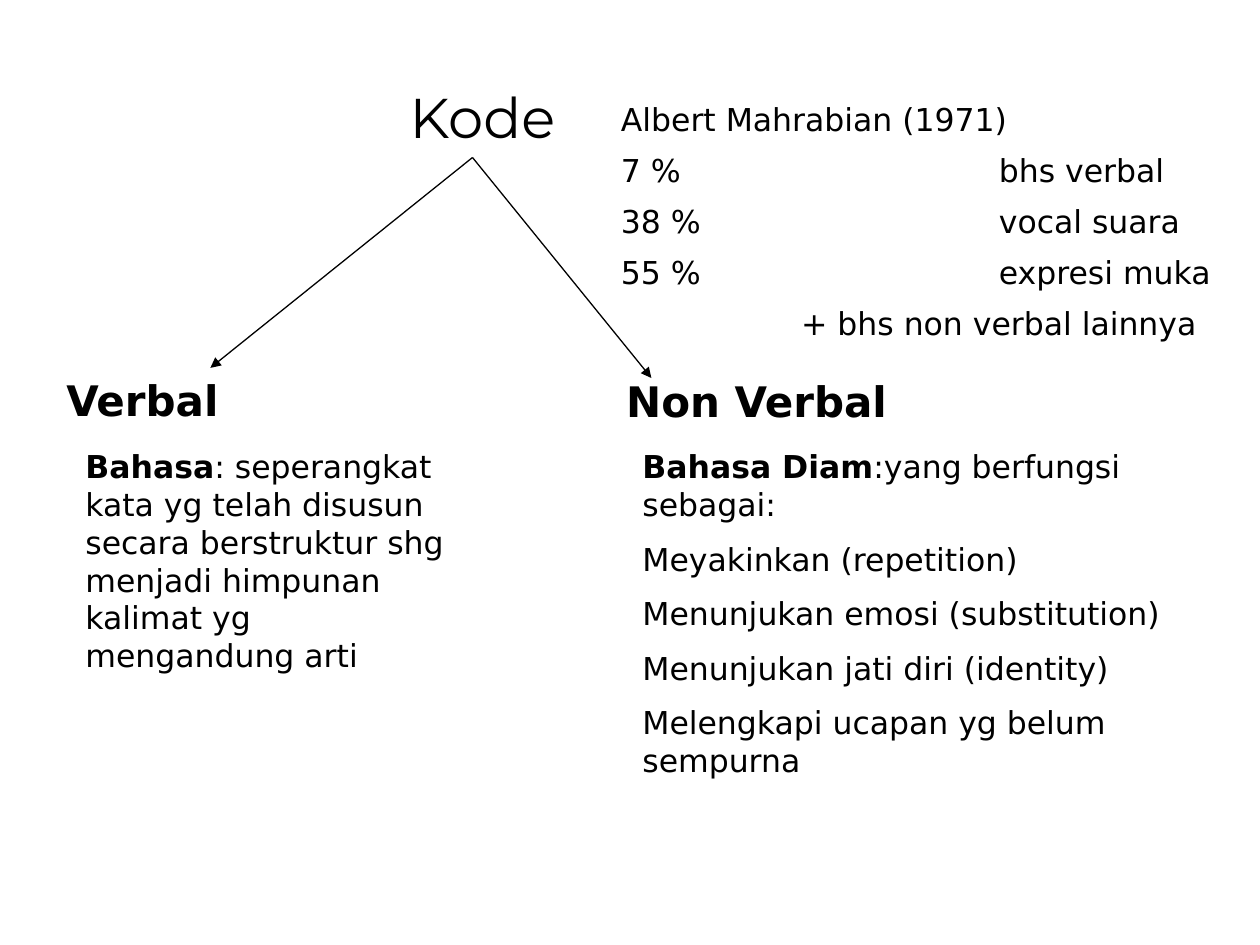
from dataclasses import dataclass

from lxml import etree
from pptx import Presentation
from pptx.dml.color import RGBColor
from pptx.enum.shapes import MSO_CONNECTOR
from pptx.enum.text import MSO_ANCHOR, MSO_AUTO_SIZE, PP_ALIGN
from pptx.oxml.ns import qn
from pptx.util import Inches, Pt

LEFT, CENTER = PP_ALIGN.LEFT, PP_ALIGN.CENTER
TOP, MIDDLE = MSO_ANCHOR.TOP, MSO_ANCHOR.MIDDLE
FIT_SHAPE, FIXED = MSO_AUTO_SIZE.SHAPE_TO_FIT_TEXT, MSO_AUTO_SIZE.NONE
STRAIGHT = MSO_CONNECTOR.STRAIGHT


@dataclass(frozen=True)
class Theme:
    ink: RGBColor = RGBColor(0, 0, 0)
    title_font: str = "Montserrat"
    body_font: str = "DejaVu Sans"
    title_size: Pt = Pt(32)
    heading_size: Pt = Pt(24)
    body_size: Pt = Pt(18)
    gap: Pt = Pt(9.6)
    line_width: Pt = Pt(0.75)


THEME = Theme()
VALUE_TAB = Inches(3)
NOTE_INDENT = Inches(1.43)

STUDY = [
    "Albert Mahrabian (1971)",
    "7 %\tbhs verbal",
    "38 %\tvocal suara",
    "55 %\texpresi muka",
    "+ bhs non verbal lainnya",
]
VERBAL = [
    ": seperangkat kata yg telah disusun secara berstruktur shg "
    "menjadi himpunan kalimat yg mengandung arti",
]
NON_VERBAL = [
    ":yang berfungsi sebagai:",
    "Meyakinkan (repetition)",
    "Menunjukan emosi (substitution)",
    "Menunjukan jati diri (identity)",
    "Melengkapi ucapan yg belum sempurna",
]


def apply(target, formats):
    for name, value in formats.items():
        setattr(target, name, value)


def add_box(page, place, anchor=TOP, auto_size=FIT_SHAPE):
    box = page.shapes.add_textbox(*map(Inches, place))
    apply(box.text_frame, {"word_wrap": True, "vertical_anchor": anchor, "auto_size": auto_size})
    return box.text_frame


def add_span(para, text, size, font=THEME.body_font, bold=False):
    span = para.add_run()
    span.text = text
    apply(span.font, {"name": font, "size": size, "bold": bold})
    span.font.color.rgb = THEME.ink


def add_title(page, text, place):
    para = add_box(page, place, MIDDLE, FIXED).paragraphs[0]
    para.alignment = CENTER
    add_span(para, text, THEME.title_size, THEME.title_font)


def add_heading(page, text, place):
    para = add_box(page, place).paragraphs[0]
    para.alignment = CENTER
    add_span(para, text, THEME.heading_size, bold=True)


def add_body(page, lines, place, term="", line_spacing=1.0):
    frame = add_box(page, place)
    for index, line in enumerate(lines):
        para = frame.add_paragraph() if index else frame.paragraphs[0]
        apply(para, {"alignment": LEFT, "line_spacing": line_spacing})
        if index:
            para.space_before = THEME.gap
        elif term:
            add_span(para, term, THEME.body_size, bold=True)
        add_span(para, line, THEME.body_size)
    return frame.paragraphs


def add_study(page, place):
    paras = add_body(page, STUDY, place, line_spacing=0.9)
    for para in paras[1:-1]:
        tabs = etree.SubElement(para._p.get_or_add_pPr(), qn("a:tabLst"))
        etree.SubElement(tabs, qn("a:tab"), pos=str(VALUE_TAB), algn="l")
    paras[-1]._p.get_or_add_pPr().set("marL", str(NOTE_INDENT))


def add_arrow(page, start, end):
    arrow = page.shapes.add_connector(STRAIGHT, *map(Inches, start + end))
    arrow.line.color.rgb = THEME.ink
    arrow.line.width = THEME.line_width
    etree.SubElement(arrow.line._get_or_add_ln(), qn("a:tailEnd"), type="triangle")
    etree.SubElement(arrow._element.spPr, qn("a:effectLst"))


def main():
    deck = Presentation()
    apply(deck, {"slide_width": Inches(10), "slide_height": Inches(7.5)})
    page = deck.slides.add_slide(deck.slide_layouts[6])

    add_title(page, "Kode", (-0.67, 0.3, 9, 1.25))
    add_heading(page, "Verbal", (0.42, 2.92, 1.42, 0.5))
    add_heading(page, "Non Verbal", (4.67, 2.93, 2.67, 0.5))
    add_study(page, (4.83, 0.78, 5.33, 2.06))
    for end in ((1.67, 2.92), (5.17, 3)):
        add_arrow(page, (3.75, 1.25), end)
    add_body(page, VERBAL, (0.58, 3.5, 3.17, 1.9), "Bahasa")
    add_body(page, NON_VERBAL, (5, 3.5, 4.75, 3.71), "Bahasa Diam")

    deck.save("out.pptx")


if __name__ == "__main__":
    main()
